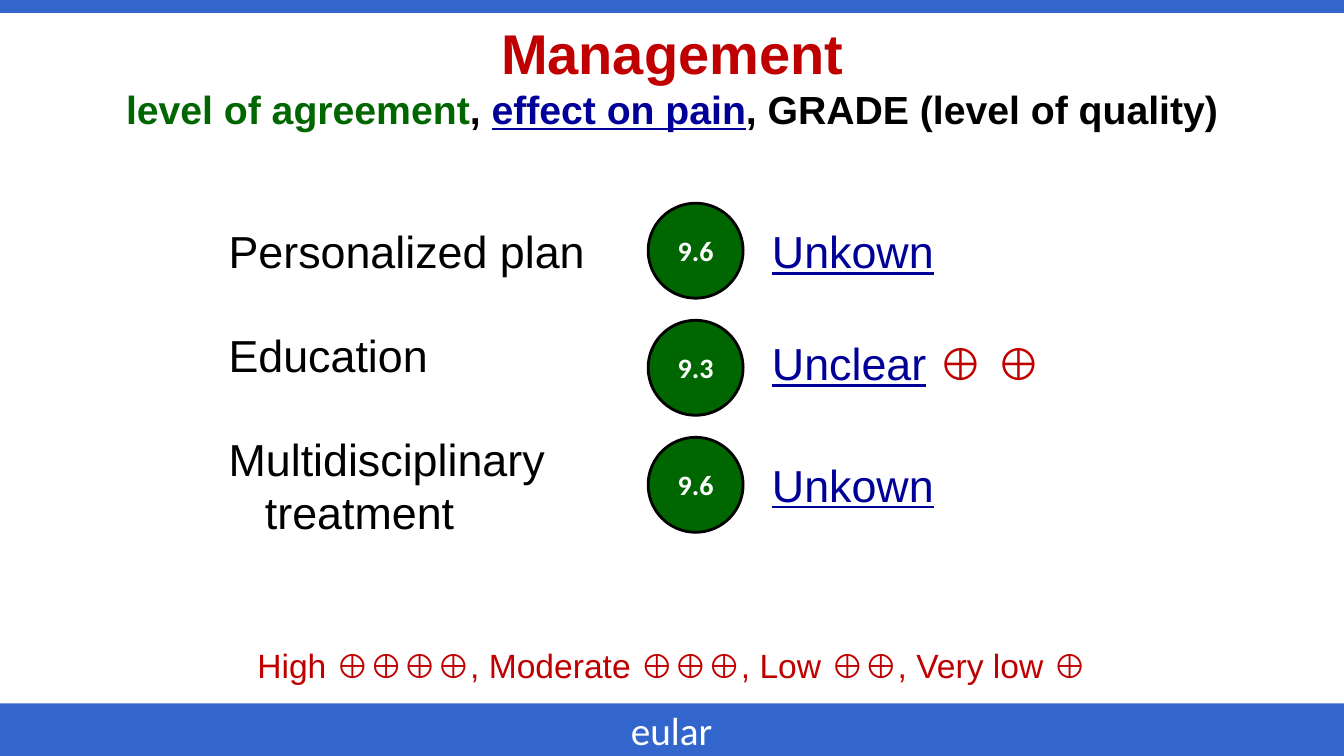
import pptx
import pptx.dml.color
import pptx.enum.shapes
import pptx.enum.text
import pptx.util

Pt = pptx.util.Pt
RGBColor = pptx.dml.color.RGBColor
ALIGN = pptx.enum.text.PP_ALIGN
ANCHOR = pptx.enum.text.MSO_ANCHOR
SHAPE = pptx.enum.shapes.MSO_SHAPE

BLUE = RGBColor(0x33, 0x66, 0xCC)
GREEN = RGBColor(0x00, 0x66, 0x00)
NAVY = RGBColor(0x00, 0x00, 0x99)
RED = RGBColor(0xC0, 0x00, 0x00)
BLACK = RGBColor(0x00, 0x00, 0x00)
WHITE = RGBColor(0xFF, 0xFF, 0xFF)

# A run is (text, colour); navy runs are underlined.
TITLE = [("Management", RED)]
SUBTITLE = [
    ("level of agreement", GREEN),
    (", ", BLACK),
    ("effect on pain", NAVY),
    (", GRADE (level of quality)", BLACK),
]
# Label lines, agreement score, effect runs, top of the effect text
TREATMENTS = [
    (["Personalized plan"], "9.6", [("Unkown", NAVY)], 156.2),
    (["Education"], "9.3", [("Unclear", NAVY), (" ", BLACK), ("⊕ ⊕", RED)], 236.2),
    (["Multidisciplinary", "treatment"], "9.6", [("Unkown", NAVY)], 323.3),
]
LEGEND = [("High ⊕⊕⊕⊕, Moderate ⊕⊕⊕, Low ⊕⊕, Very low ⊕", RED)]
FOOTER = [("eular", WHITE)]

WIDTH, HEIGHT = 960, 540
LABEL_LEFT, LABEL_TOP, LABEL_PITCH, LABEL_WIDTH = 156.2, 156.2, 74.2, 290
SCORE_LEFT, SCORE_TOP, SCORE_PITCH, SCORE_SIZE = 463, 145.2, 83.6, 67.8
EFFECT_LEFT, EFFECT_WIDTH = 544.3, 208
LINE_HEIGHT = 46
HANGING = 26


def write(p, runs, size, font="Arial", bold=False, align=ALIGN.LEFT):
    p.alignment = align
    p.font.size = Pt(size)
    p.font.name = font
    p.font.bold = bold
    for text, color in runs:
        r = p.add_run()
        r.text = text
        r.font.color.rgb = color
        if color == NAVY:
            r.font.underline = True


def add_text(left, top, width, height, lines, size, **style):
    tf = slide.shapes.add_textbox(Pt(left), Pt(top), Pt(width), Pt(height)).text_frame
    tf.word_wrap = True
    for i, runs in enumerate(lines):
        p = tf.add_paragraph() if i else tf.paragraphs[0]
        if i:
            p._p.get_or_add_pPr().set("marL", str(Pt(HANGING)))
        write(p, runs, size, **style)


def add_filled(kind, left, top, width, height, color):
    sp = slide.shapes.add_shape(kind, Pt(left), Pt(top), Pt(width), Pt(height))
    sp.shadow.inherit = False
    sp.fill.solid()
    sp.fill.fore_color.rgb = color
    sp.line.fill.background()
    return sp


prs = pptx.Presentation()
prs.slide_width, prs.slide_height = Pt(WIDTH), Pt(HEIGHT)
slide = prs.slides.add_slide(prs.slide_layouts[5])

add_filled(SHAPE.RECTANGLE, 0, -2.2, WIDTH, 11.4, BLUE)
add_filled(SHAPE.RECTANGLE, 0, 502.4, WIDTH, 37.6, BLUE)
add_text(443.5, 501.1, 90, 41, [FOOTER], 28, font="Calibri")

title = slide.shapes.title
title.left, title.top, title.width, title.height = Pt(0), Pt(9.4), Pt(WIDTH), Pt(90)
tf = title.text_frame
tf.auto_size = pptx.enum.text.MSO_AUTO_SIZE.NONE
tf.vertical_anchor = ANCHOR.TOP
write(tf.paragraphs[0], TITLE, 40, bold=True, align=ALIGN.CENTER)
write(tf.add_paragraph(), SUBTITLE, 28, bold=True, align=ALIGN.CENTER)

for i, (label, score, effect, effect_top) in enumerate(TREATMENTS):
    add_text(LABEL_LEFT, LABEL_TOP + i * LABEL_PITCH, LABEL_WIDTH,
             LINE_HEIGHT * len(label), [[(line, BLACK)] for line in label], 32)
    circle = add_filled(SHAPE.OVAL, SCORE_LEFT, SCORE_TOP + i * SCORE_PITCH,
                        SCORE_SIZE, SCORE_SIZE, GREEN)
    circle.line.color.rgb = BLACK
    circle.line.width = Pt(2)
    circle.text_frame.vertical_anchor = ANCHOR.MIDDLE
    write(circle.text_frame.paragraphs[0], [(score, WHITE)], 20,
          font="Calibri", bold=True, align=ALIGN.CENTER)
    add_text(EFFECT_LEFT, effect_top, EFFECT_WIDTH, LINE_HEIGHT, [effect], 32)

add_text(151.2, 457.2, 657.4, 36, [LEGEND], 24, align=ALIGN.CENTER)

prs.save("out.pptx")
